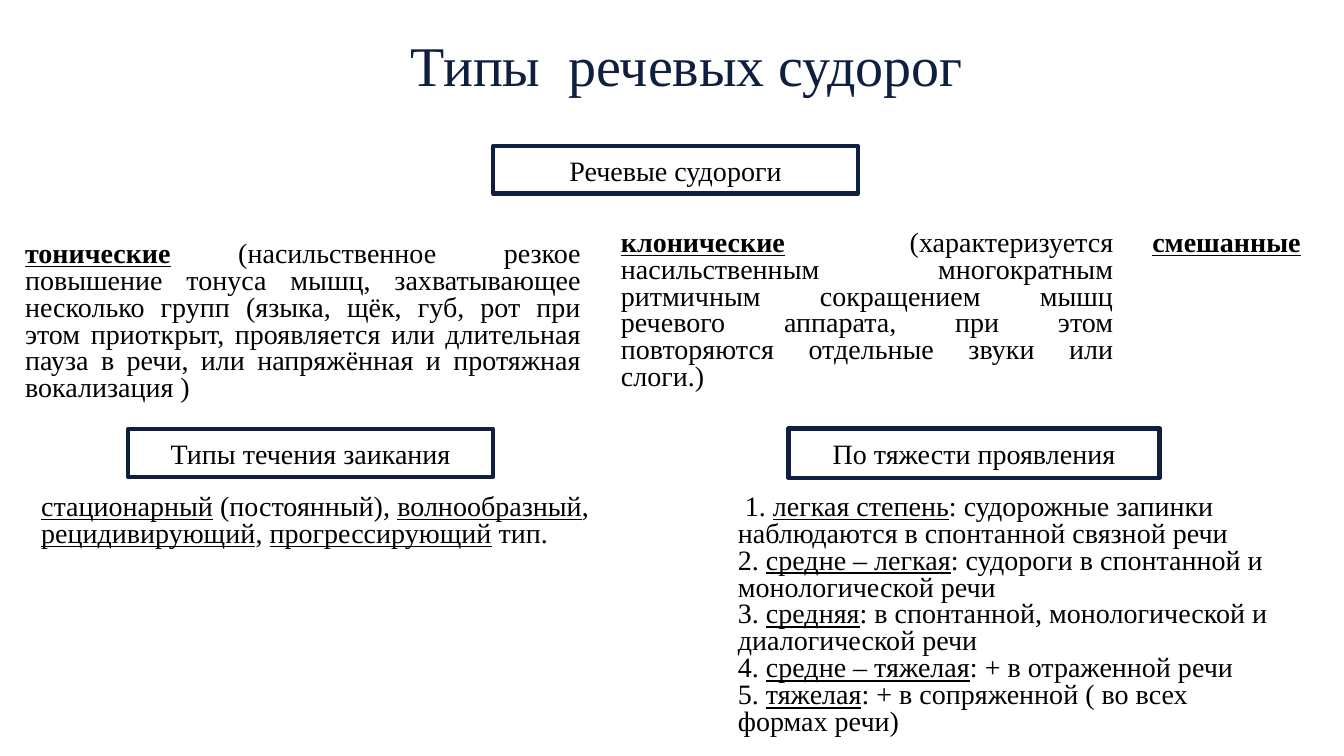
from dataclasses import dataclass

from pptx import Presentation
from pptx.dml.color import RGBColor
from pptx.enum.shapes import MSO_SHAPE as Shape
from pptx.enum.text import MSO_ANCHOR as Anchor, MSO_AUTO_SIZE as AutoSize, PP_ALIGN as Align
from pptx.slide import Slide
from pptx.text.text import TextFrame
from pptx.util import Inches, Pt


@dataclass(frozen=True)
class Theme:
    font: str = "Times New Roman"
    navy: RGBColor = RGBColor(0x0F, 0x1F, 0x40)
    black: RGBColor = RGBColor(0, 0, 0)
    white: RGBColor = RGBColor(255, 255, 255)
    title_size: Pt = Pt(40)
    body_size: Pt = Pt(20)
    border: Pt = Pt(3)
    title_spacing: float = 0.9
    body_spacing: float = 0.8


@dataclass(frozen=True)
class Box:
    left: float
    top: float
    width: float
    height: float


@dataclass(frozen=True)
class Heading:
    box: Box
    text: str


@dataclass(frozen=True)
class Passage:
    """Body text; words between underscores are underlined terms."""
    box: Box
    lines: tuple[str, ...]
    align: Align = Align.LEFT
    bold_terms: bool = False
    wrap: bool = True


THEME = Theme()

TITLE = Heading(Box(2.31, 0.4, 9, 0.55), "Типы  речевых судорог")

HEADINGS = (
    Heading(Box(4.89, 1.45, 3.62, 0.47), "Речевые судороги"),
    Heading(Box(1.27, 4.26, 3.62, 0.47), "Типы течения заикания"),
    Heading(Box(7.82, 4.25, 3.68, 0.49), "По тяжести проявления"),
)

PASSAGES = (
    Passage(
        Box(0.15, 2.35, 5.71, 1.72),
        ("_тонические_ (насильственное резкое повышение тонуса мышц, захватывающее "
         "несколько групп (языка, щёк, губ, рот при этом приоткрыт, проявляется или "
         "длительная пауза в речи, или напряжённая и протяжная вокализация )",),
        Align.JUSTIFY, bold_terms=True,
    ),
    Passage(
        Box(6.06, 2.24, 5.08, 1.72),
        ("_клонические_ (характеризуется насильственным многократным ритмичным "
         "сокращением мышц речевого аппарата, при этом повторяются отдельные звуки "
         "или слоги.)",),
        Align.JUSTIFY, bold_terms=True,
    ),
    Passage(
        Box(11.33, 2.24, 1.69, 0.37), ("_смешанные_",),
        Align.JUSTIFY, bold_terms=True, wrap=False,
    ),
    Passage(
        Box(0.31, 4.86, 5.74, 0.64),
        ("_стационарный_ (постоянный), _волнообразный_, _рецидивирующий_, "
         "_прогрессирующий_ тип.",),
    ),
    Passage(
        Box(7.22, 4.86, 6.11, 2.61),
        (
            " 1. _легкая степень_: судорожные запинки",
            "наблюдаются в спонтанной связной речи",
            "2. _средне – легкая_: судороги в спонтанной и",
            "монологической речи",
            "3. _средняя_: в спонтанной, монологической и",
            "диалогической речи",
            "4. _средне – тяжелая_: + в отраженной речи",
            "5. _тяжелая_: + в сопряженной ( во всех",
            "формах речи)",
        ),
    ),
)


def inches(box: Box) -> tuple[Inches, ...]:
    return tuple(Inches(length) for length in (box.left, box.top, box.width, box.height))


def write_lines(frame: TextFrame, lines: tuple[str, ...], align: Align, spacing: float,
                size: Pt, color: RGBColor, bold_terms: bool = False) -> None:
    """Write one paragraph per line, underlining the marked terms."""
    for index, line in enumerate(lines):
        paragraph = frame.add_paragraph() if index else frame.paragraphs[0]
        paragraph.alignment = align
        paragraph.line_spacing = spacing
        paragraph.font.name = THEME.font
        paragraph.font.size = size
        paragraph.font.color.rgb = color
        for position, text in enumerate(line.split("_")):
            if not text:
                continue
            run = paragraph.add_run()
            run.text = text
            if position % 2:
                run.font.underline = True
                run.font.bold = bold_terms


def add_title(slide: Slide, title: Heading) -> None:
    frame = slide.shapes.add_textbox(*inches(title.box)).text_frame
    frame.word_wrap = True
    frame.vertical_anchor = Anchor.MIDDLE
    write_lines(frame, (title.text,), Align.CENTER, THEME.title_spacing,
                THEME.title_size, THEME.navy)


def add_heading(slide: Slide, heading: Heading) -> None:
    shape = slide.shapes.add_shape(Shape.RECTANGLE, *inches(heading.box))
    shape.shadow.inherit = False
    shape.fill.solid()
    shape.fill.fore_color.rgb = THEME.white
    shape.line.color.rgb = THEME.navy
    shape.line.width = THEME.border
    frame = shape.text_frame
    frame.word_wrap = False
    frame.vertical_anchor = Anchor.MIDDLE
    write_lines(frame, (heading.text,), Align.CENTER, 1.0, THEME.body_size, THEME.black)


def add_passage(slide: Slide, passage: Passage) -> None:
    frame = slide.shapes.add_textbox(*inches(passage.box)).text_frame
    frame.word_wrap = passage.wrap
    frame.auto_size = AutoSize.SHAPE_TO_FIT_TEXT
    write_lines(frame, passage.lines, passage.align, THEME.body_spacing,
                THEME.body_size, THEME.black, passage.bold_terms)


def main() -> None:
    presentation = Presentation()
    presentation.slide_width = Inches(13.33)
    presentation.slide_height = Inches(7.5)
    slide = presentation.slides.add_slide(presentation.slide_layouts[6])
    add_title(slide, TITLE)
    for heading in HEADINGS:
        add_heading(slide, heading)
    for passage in PASSAGES:
        add_passage(slide, passage)
    presentation.save("out.pptx")


if __name__ == "__main__":
    main()
